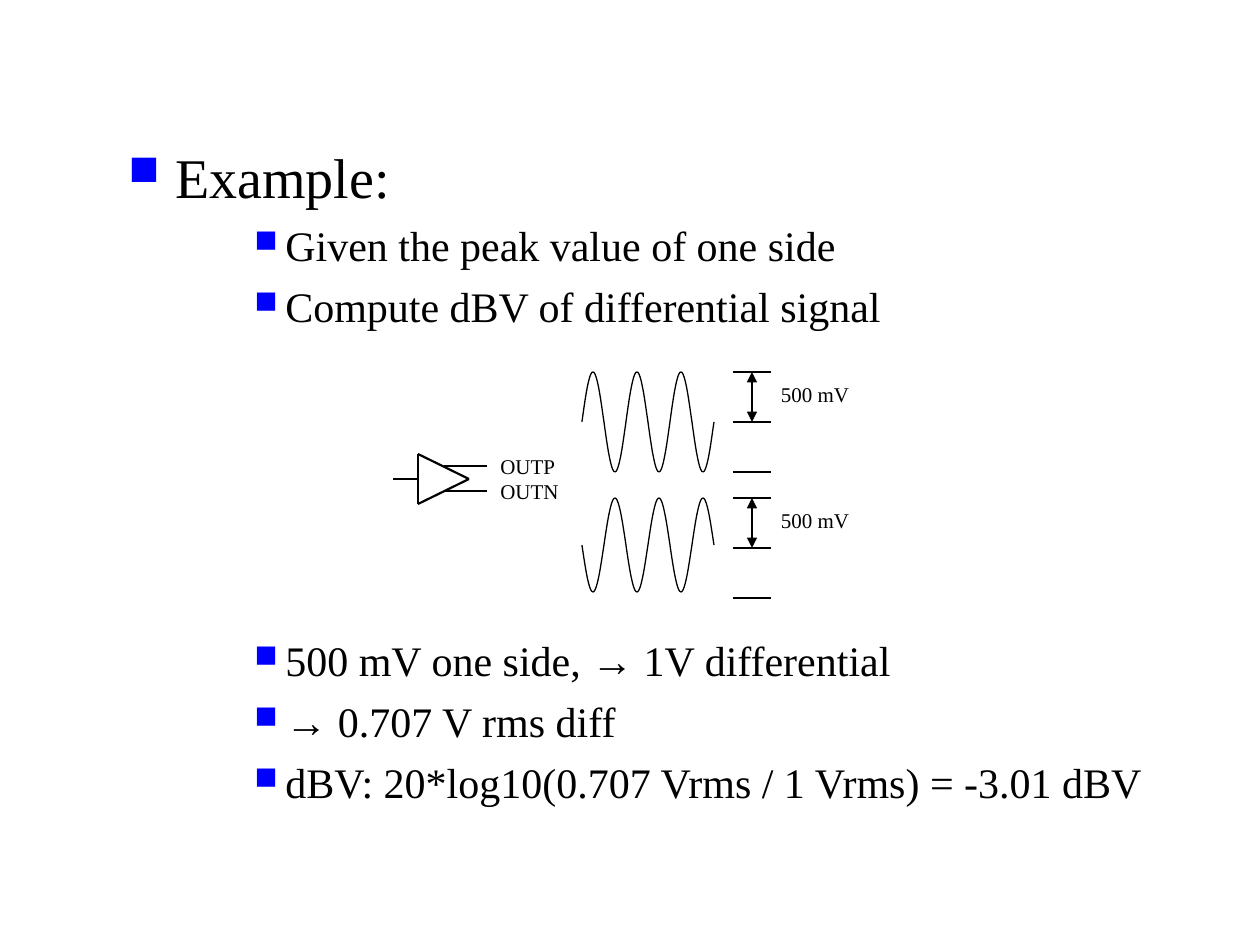
from math import pi, sin

from lxml import etree
from pptx import Presentation
from pptx.dml.color import RGBColor
from pptx.enum.shapes import MSO_CONNECTOR
from pptx.enum.text import PP_ALIGN
from pptx.oxml.ns import qn
from pptx.util import Emu, Pt

STRAIGHT = MSO_CONNECTOR.STRAIGHT
LEFT, CENTER = PP_ALIGN.LEFT, PP_ALIGN.CENTER
EMU_PER_PX = 914400 / 126
FONT = "Times New Roman"
COLORS = {"ink": "000000", "bullet": "0000FF"}
THIN, THICK = 0.75, 1.25


def px(value):
    return Emu(round(value * EMU_PER_PX))


class SlideBuilder:
    """Holds the style and the current slide."""

    def __init__(self, slide):
        self.shapes = slide.shapes
        self.ink = RGBColor.from_string(COLORS["ink"])

    def style_line(self, shape, weight):
        shape.line.color.rgb = self.ink
        shape.line.width = Pt(weight)

    def style_font(self, paragraph, size):
        font = paragraph.font
        font.name, font.size, font.color.rgb = FONT, Pt(size), self.ink

    def text_frame(self, left, top, width, height):
        box = self.shapes.add_textbox(px(left), px(top), px(width), px(height))
        box.text_frame.word_wrap = True
        return box.text_frame

    def label(self, text, left, top, width, height, align=LEFT):
        paragraph = self.text_frame(left, top, width, height).paragraphs[0]
        paragraph.text = text
        paragraph.alignment = align
        self.style_font(paragraph, 12)

    def bullets(self, items, left, top, width, height):
        """Each item is text, size, space before in points, indent and hang in px."""
        frame = self.text_frame(left, top, width, height)
        for index, (text, size, space, indent, hang) in enumerate(items):
            paragraph = frame.add_paragraph() if index else frame.paragraphs[0]
            paragraph.text = text
            paragraph.space_before = Pt(space)
            self.style_font(paragraph, size)
            properties = paragraph._p.get_or_add_pPr()
            properties.set("marL", str(px(indent)))
            properties.set("indent", str(-px(hang)))
            color = etree.SubElement(properties, qn("a:buClr"))
            etree.SubElement(color, qn("a:srgbClr"), val=COLORS["bullet"])
            etree.SubElement(properties, qn("a:buSzPct"), val="75000")
            etree.SubElement(properties, qn("a:buChar"), char="■")
            # The default run style must follow the bullet settings
            properties.append(properties.find(qn("a:defRPr")))

    def line(self, x1, y1, x2, y2, weight=THIN, arrows=False):
        connector = self.shapes.add_connector(STRAIGHT, px(x1), px(y1), px(x2), px(y2))
        self.style_line(connector, weight)
        if arrows:
            outline = connector.line._get_or_add_ln()
            for end in ("a:headEnd", "a:tailEnd"):
                etree.SubElement(outline, qn(end), type="triangle")
        etree.SubElement(connector._element.spPr, qn("a:effectLst"))

    def sine(self, left, middle, amplitude, quarter_width, quarters, steps=10):
        """Draws a sine wave as quarter-period arcs."""
        for quarter in range(quarters):
            points = []
            for step in range(steps + 1):
                phase = quarter + step / steps
                points.append((px(left + quarter_width * phase),
                               px(middle - amplitude * sin(phase * pi / 2))))
            builder = self.shapes.build_freeform(*points[0], scale=1.0)
            builder.add_line_segments(points[1:], close=False)
            arc = builder.convert_to_shape()
            arc.shadow.inherit = False
            arc.fill.background()
            self.style_line(arc, THIN)

    def level_marks(self, top, gap=50):
        """Draws peak, middle and trough marks with the peak dimension."""
        for level in range(3):
            self.line(733, top + level * gap, 771, top + level * gap)
        self.line(752, top, 752, top + gap, arrows=True)
        self.label("500 mV", 750, top + 3, 130, 42, CENTER)


def main():
    presentation = Presentation()
    presentation.slide_width, presentation.slide_height = px(1260), px(945)
    slide = presentation.slides.add_slide(presentation.slide_layouts[6])
    builder = SlideBuilder(slide)

    # Text, with room for the diagram before the results
    near, far = 6, 173.5
    details = [
        ("Given the peak value of one side", near),
        ("Compute dBV of differential signal", near),
        ("500 mV one side, → 1V differential", far),
        ("→ 0.707 V rms diff", near),
        ("dBV: 20*log10(0.707 Vrms / 1 Vrms) = -3.01 dBV", near),
    ]
    items = [("Example:", 32, near, 47, 47)]
    items += [(text, 24, space, 157, 31) for text, space in details]
    builder.bullets(items, 116, 136, 1071, 567)

    # Opposite waves and their levels
    for middle, amplitude, top in ((422, 50, 372), (545, -47, 498)):
        builder.sine(582, middle, amplitude, quarter_width=11, quarters=12)
        builder.level_marks(top)

    # Amplifier
    corners = [(418, 504), (418, 454), (469, 479)]
    for index, corner in enumerate(corners):
        builder.line(*corners[index - 1], *corner, weight=THICK)
    builder.line(418, 479, 393, 479)
    for name, y in (("OUTP", 466), ("OUTN", 491)):
        builder.line(487, y, 444, y)
        builder.label(name, 488, y - 19, 101, 44)

    presentation.save("out.pptx")


if __name__ == "__main__":
    main()
